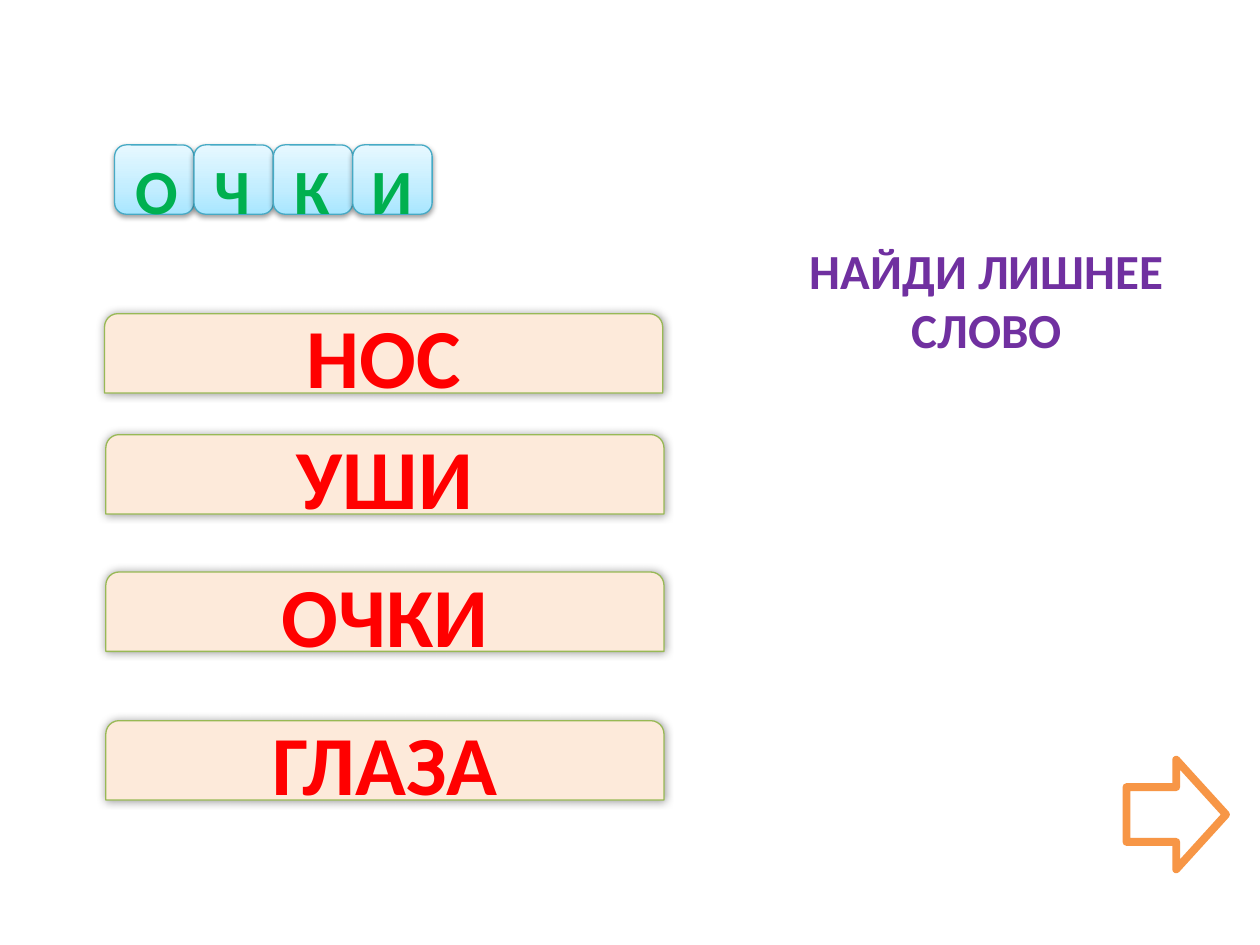
"""Build the odd-word-out slide with letter tiles, word choices and a next arrow."""
from lxml.etree import SubElement
from pptx import Presentation
from pptx.dml.color import RGBColor as RGB
from pptx.enum.shapes import MSO_SHAPE as SHAPE
from pptx.enum.text import MSO_ANCHOR as ANCHOR, MSO_AUTO_SIZE as AUTO, PP_ALIGN as ALIGN
from pptx.oxml.ns import qn
from pptx.util import Inches, Pt

THEME = {
    "font": "Calibri",
    "tile_stops": [(0, "A7E6FF"), (35, "C1EDFF"), (100, "E7F8FF")],
    "tile_line": "46AAC5",
    "word_fill": "FDEADA",
    "word_line": "98B955",
    "arrow_fill": "FFFFFF",
    "arrow_line": "F79646",
    "shadow": "000000",
    "word": {"size": 48, "color": "FF0000"},
    "letter": {"size": 36, "color": "00B050"},
    "task": {"size": 28, "color": "7030A0"},
}


def add_box(kind, box, line, width, shadow=None):
    sp = s.shapes.add_shape(kind, *map(Inches, box))
    sp.line.color.rgb = RGB.from_string(line)
    sp.line.width = Pt(width)
    sp.shadow.inherit = False
    if shadow:
        effects = sp._element.spPr.find(qn("a:effectLst"))
        outer = SubElement(effects, qn("a:outerShdw"), rotWithShape="0")
        for key, value in shadow.items():
            if key != "alpha":
                outer.set(key, str(value))
        color = SubElement(outer, qn("a:srgbClr"), val=THEME["shadow"])
        SubElement(color, qn("a:alpha"), val=str(shadow["alpha"] * 1000))
    return sp


def write(tf, text, style, align, **frame):
    for name, value in frame.items():
        setattr(tf, name, value)
    p = tf.paragraphs[0]
    p.alignment = align
    r = p.add_run()
    r.text = text
    font = {"name": THEME["font"], "size": Pt(THEME[style]["size"]), "bold": True}
    for name, value in font.items():
        setattr(r.font, name, value)
    r.font.color.rgb = RGB.from_string(THEME[style]["color"])


prs = Presentation()
prs.slide_width, prs.slide_height = Inches(10), Inches(7.5)
s = prs.slides.add_slide(prs.slide_layouts[6])

tile_shadow = {"blurRad": Pt(3.1), "dist": Pt(1.6), "dir": 90 * 60000, "alpha": 38}
for i in range(4):
    sp = add_box(SHAPE.ROUNDED_RECTANGLE, (0.91 + i * 0.63, 1.15, 0.63, 0.55),
                 THEME["tile_line"], 0.75, tile_shadow)
    sp.fill.gradient()
    sp.fill.gradient_angle = 90
    stops = sp._element.spPr.find(".//" + qn("a:gsLst"))
    stops.clear()
    for pos, color in THEME["tile_stops"]:
        stop = SubElement(stops, qn("a:gs"), pos=str(pos * 1000))
        SubElement(stop, qn("a:srgbClr"), val=color)

word_shadow = {"blurRad": Pt(5), "dist": 0, "dir": 0, "alpha": 40}
words = [("НОС", 0.83, 2.49), ("УШИ", 0.84, 3.45), ("ОЧКИ", 0.84, 4.54), ("ГЛАЗА", 0.84, 5.72)]
for word, left, top in words:
    sp = add_box(SHAPE.ROUND_2_SAME_RECTANGLE, (left, top, 4.43, 0.63),
                 THEME["word_line"], 0.75, word_shadow)
    sp.fill.solid()
    sp.fill.fore_color.rgb = RGB.from_string(THEME["word_fill"])
    write(sp.text_frame, word, "word", ALIGN.CENTER, vertical_anchor=ANCHOR.MIDDLE, word_wrap=True)

letters = [("О", 0.98, 0.54), ("Ч", 1.6, 0.49), ("К", 2.24, 0.49), ("И", 2.85, 0.53)]
for letter, left, width in letters:
    sp = s.shapes.add_textbox(*map(Inches, (left, 1.15, width, 0.71)))
    write(sp.text_frame, letter, "letter", ALIGN.LEFT,
          word_wrap=False, auto_size=AUTO.SHAPE_TO_FIT_TEXT)

sp = s.shapes.add_textbox(*map(Inches, (5.94, 1.86, 3.78, 1.04)))
write(sp.text_frame, "НАЙДИ ЛИШНЕЕ СЛОВО", "task", ALIGN.CENTER,
      word_wrap=True, auto_size=AUTO.SHAPE_TO_FIT_TEXT)

sp = add_box(SHAPE.RIGHT_ARROW, (8.94, 6.03, 0.79, 0.87), THEME["arrow_line"], 4.5)
sp.fill.solid()
sp.fill.fore_color.rgb = RGB.from_string(THEME["arrow_fill"])

prs.save("out.pptx")
